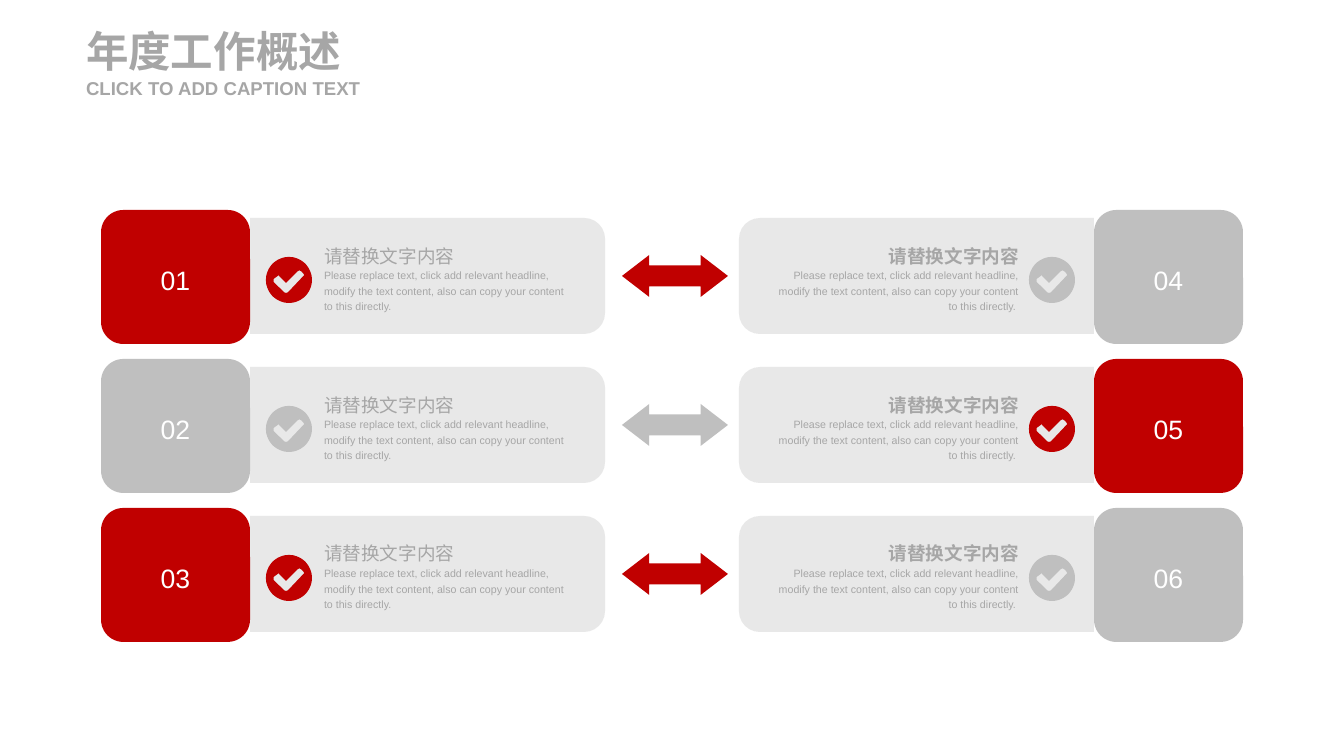
import math

from lxml import etree
from pptx import Presentation
from pptx.dml.color import RGBColor
from pptx.enum.shapes import MSO_SHAPE
from pptx.enum.text import MSO_ANCHOR, MSO_AUTO_SIZE, PP_ALIGN
from pptx.oxml.ns import qn
from pptx.util import Pt

PX = 9565  # EMU per px
RED = RGBColor(0xC0, 0x00, 0x00)
SILVER = RGBColor(0xBF, 0xBF, 0xBF)
PALE = RGBColor(0xE6, 0xE6, 0xE6)
GREY = RGBColor(0xA6, 0xA6, 0xA6)
WHITE = RGBColor(0xFF, 0xFF, 0xFF)
FONT = "Arial"
LEFT, CENTER, RIGHT = PP_ALIGN.LEFT, PP_ALIGN.CENTER, PP_ALIGN.RIGHT
MIDDLE, TOP = MSO_ANCHOR.MIDDLE, MSO_ANCHOR.TOP
ROUNDED = MSO_SHAPE.ROUNDED_RECTANGLE
HALF_ROUNDED = MSO_SHAPE.ROUND_2_SAME_RECTANGLE
DOUBLE_ARROW = MSO_SHAPE.LEFT_RIGHT_ARROW
NO_AUTOFIT = MSO_AUTO_SIZE.NONE

HEADING = "请替换文字内容"
DETAIL = ("Please replace text, click add relevant headline, modify the text "
          "content, also can copy your content to this directly.")
ROWS, ROW_PITCH = 3, 149
PANEL_WIDTH, PANEL_HEIGHT = 355, 116
BADGE_RADIUS = 23
# Tick outline around the badge centre, in tenths of a px
TICK = [(143, -67), (124, -86), (105, -96), (86, -86), (-29, 29), (-96, -38),
        (-105, -48), (-115, -38), (-153, -10), (-153, 20), (-48, 124),
        (-29, 130), (-10, 124), (143, -38), (153, -48)]
# Alignment, heading bold, tail, then the x of panel, number, badge and text
SIDES = [(LEFT, False, "", 250, 101, 289, 324),
         (RIGHT, True, " ", 739, 1094, 1052, 772)]


def paint(shape, color):
    shape.shadow.inherit = False
    shape.fill.solid()
    shape.fill.fore_color.rgb = color
    shape.line.fill.background()


def write(shape, spans, align, anchor, spacing=1.0):
    """Put (text, size, bold, color) spans in one paragraph, a line each."""
    frame = shape.text_frame
    frame.auto_size = NO_AUTOFIT
    frame.word_wrap = True
    frame.vertical_anchor = anchor
    frame.margin_left = frame.margin_right = 0
    frame.margin_top = frame.margin_bottom = 0
    para = frame.paragraphs[0]
    para.alignment = align
    para.line_spacing = spacing
    para.space_before = Pt(0)
    for index, (text, size, bold, color) in enumerate(spans):
        if index:
            para.add_line_break()
        span = para.add_run()
        span.text = text
        span.font.name = FONT
        span.font.size = Pt(size)
        span.font.bold = bold
        span.font.color.rgb = color


deck = Presentation()
deck.slide_width, deck.slide_height = 1344 * PX, 756 * PX
page = deck.slides.add_slide(deck.slide_layouts[5])
shapes = page.shapes

# Title and caption
title = shapes.title
title.left, title.top, title.width, title.height = 86 * PX, 25 * PX, 293 * PX, 52 * PX
write(title, [("年度工作概述", 32, True, GREY)], LEFT, MIDDLE)
caption = shapes.add_textbox(86 * PX, 77 * PX, 293 * PX, 23 * PX)
write(caption, [("CLICK TO ADD CAPTION TEXT", 14, True, GREY)], LEFT, MIDDLE)

for row in range(ROWS):
    offset = row * ROW_PITCH

    # Arrow between the two sides
    arrow = shapes.add_shape(DOUBLE_ARROW, 622 * PX, (255 + offset) * PX, 106 * PX, 42 * PX)
    arrow.adjustments[0], arrow.adjustments[1] = 0.5, 0.65
    paint(arrow, SILVER if row % 2 else RED)

    for side, (align, bold, tail, panel_x, number_x, badge_x, text_x) in enumerate(SIDES):
        accent = SILVER if (row + side) % 2 else RED

        # Panel, an upright shape turned so its round corners face the arrow
        shift = (PANEL_WIDTH - PANEL_HEIGHT) / 2
        panel = shapes.add_shape(
            HALF_ROUNDED, int((panel_x + shift) * PX), int((218 + offset - shift) * PX),
            PANEL_HEIGHT * PX, PANEL_WIDTH * PX)
        panel.rotation = 270 if side else 90
        panel.adjustments[0] = 0.18
        paint(panel, PALE)
        color = panel._element.spPr.find(qn("a:solidFill"))[0]
        etree.SubElement(color, qn("a:alpha")).set("val", "90000")

        # Number block
        number = shapes.add_shape(ROUNDED, number_x * PX, (210 + offset) * PX, 149 * PX, 134 * PX)
        paint(number, accent)
        label = f"{side * ROWS + row + 1:02d}"
        write(number, [(label, 20, False, WHITE)], CENTER, MIDDLE, 1.2)

        # Round badge with the tick cut out
        center_x, center_y = badge_x * 10, (280 + offset) * 10
        circle = [(BADGE_RADIUS * 10 * math.cos(math.radians(angle)),
                   BADGE_RADIUS * 10 * math.sin(math.radians(angle)))
                  for angle in range(0, 360, 5)]
        rim, tick = [[(center_x + x, center_y + y) for x, y in outline]
                     for outline in (circle, TICK)]
        builder = shapes.build_freeform(*rim[0], scale=PX / 10)
        builder.add_line_segments(rim[1:], close=True)
        builder.move_to(*tick[0])
        builder.add_line_segments(tick[1:], close=True)
        paint(builder.convert_to_shape(), accent)

        # Heading and detail
        box = shapes.add_textbox(text_x * PX, (240 + offset) * PX, 247 * PX, 73 * PX)
        write(box, [(HEADING, 14, bold, GREY), (DETAIL + tail, 8, False, GREY)],
              align, TOP, 1.2)

deck.save("out.pptx")
